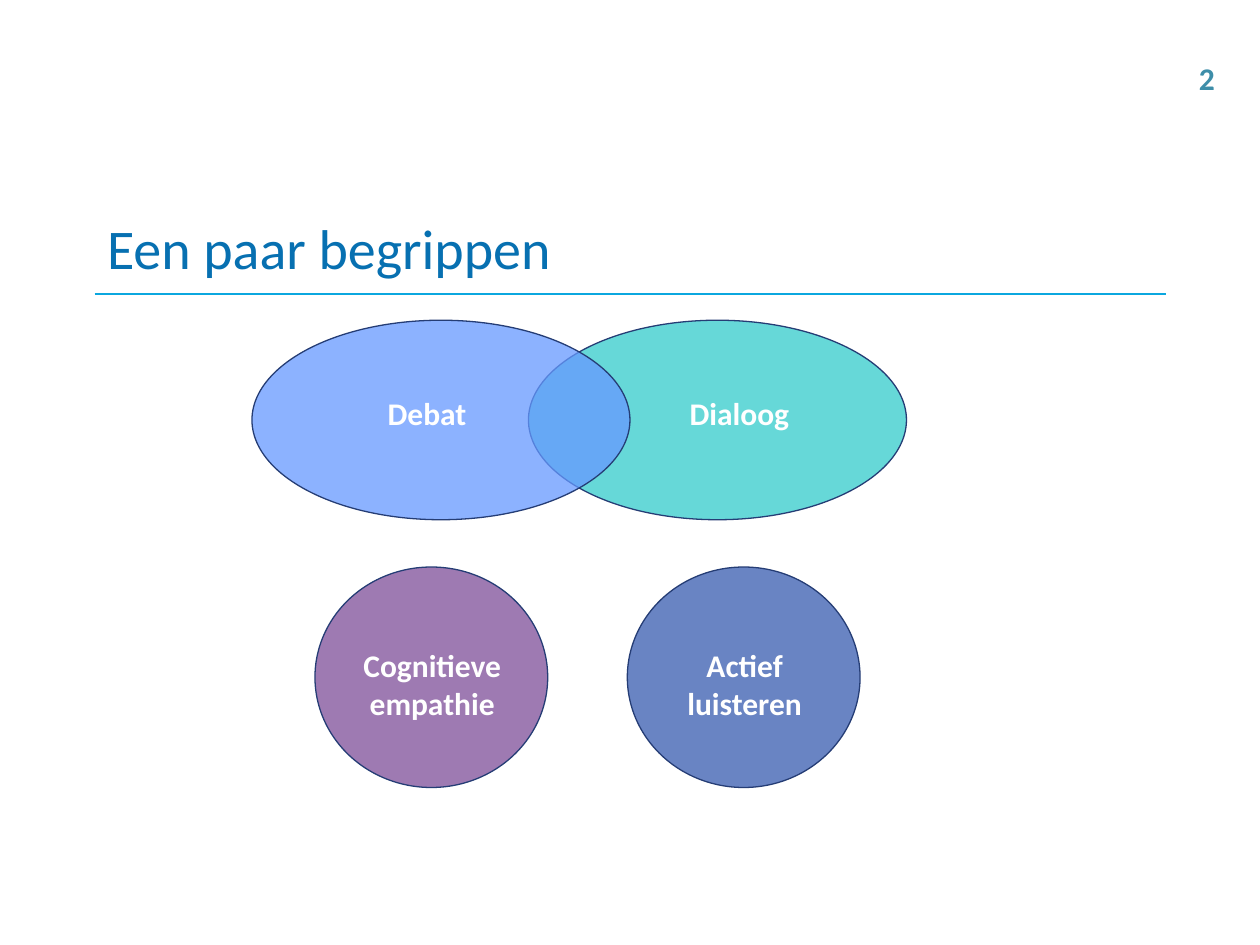
"""Build a slide with four terms about debate and dialogue."""
import pptx
import pptx.dml.color
import pptx.enum.shapes
import pptx.enum.text
import pptx.oxml.ns
import pptx.util
from lxml import etree

Pt = pptx.util.Pt
Align = pptx.enum.text.PP_ALIGN
Anchor = pptx.enum.text.MSO_ANCHOR
Fit = pptx.enum.text.MSO_AUTO_SIZE
Kind = pptx.enum.shapes
qn = pptx.oxml.ns.qn


def paint(hue):
    return pptx.dml.color.RGBColor.from_string(hue)


def apply(item, style):
    for name, value in style.items():
        setattr(item, name, value)


class Deck:
    face = "Calibri"
    edge = "253D75"
    thin = Pt(0.75)
    alpha = "75000"

    def __init__(self, wide, high):
        self.show = pptx.Presentation()
        apply(self.show, {"slide_width": Pt(wide), "slide_height": Pt(high)})
        self.slide = self.show.slides.add_slide(self.show.slide_layouts[5])

    def label(self, frame, text, size, hue, bold, align):
        para = frame.paragraphs[0]
        para.alignment = align
        run = para.add_run()
        run.text = text
        apply(run.font, {"name": self.face, "size": Pt(size), "bold": bold})
        run.font.color.rgb = paint(hue)

    def title(self, text, x, y, w, h):
        head = self.slide.shapes.title
        apply(head, {"left": Pt(x), "top": Pt(y), "width": Pt(w), "height": Pt(h)})
        apply(head.text_frame, {"vertical_anchor": Anchor.MIDDLE, "auto_size": Fit.NONE})
        self.label(head.text_frame, text, 32, "0770B1", False, Align.LEFT)

    def rule(self, x, y, end, hue):
        line = self.slide.shapes.add_connector(
            Kind.MSO_CONNECTOR.STRAIGHT, Pt(x), Pt(y), Pt(end), Pt(y))
        line.line.color.rgb = paint(hue)
        line.line.width = self.thin
        etree.SubElement(line._element.spPr, qn("a:effectLst"))

    def oval(self, x, y, w, h, hue):
        oval = self.slide.shapes.add_shape(
            Kind.MSO_SHAPE.OVAL, Pt(x), Pt(y), Pt(w), Pt(h))
        oval.shadow.inherit = False
        oval.fill.solid()
        oval.fill.fore_color.rgb = paint(hue)
        tone = oval._element.spPr.find(qn("a:solidFill"))[0]
        etree.SubElement(tone, qn("a:alpha"), val=self.alpha)
        oval.line.color.rgb = paint(self.edge)
        oval.line.width = self.thin

    def text(self, text, x, y, w, h, hue="FFFFFF", inset=3, wrap=True, align=Align.CENTER):
        box = self.slide.shapes.add_textbox(Pt(x), Pt(y), Pt(w), Pt(h))
        apply(box.text_frame, {"word_wrap": wrap, "auto_size": Fit.SHAPE_TO_FIT_TEXT})
        if inset is not None:
            sides = ("left", "top", "right", "bottom")
            apply(box.text_frame, {"margin_" + side: Pt(inset) for side in sides})
        self.label(box.text_frame, text, 18, hue, True, align)

    def save(self):
        self.show.save("out.pptx")


def main():
    deck = Deck(720, 540)
    deck.rule(54, 168, 666, "0BA7DF")
    deck.title("Een paar begrippen", 54, 114, 612, 54)
    deck.text("2", 678, 30, 24, 29, "3E8EA9", None, False, Align.LEFT)
    for x, hue in ((302, "33CCCC"), (144, "6699FF")):
        deck.oval(x, 183, 216, 114, hue)
    for text, x in (("Debat", 186.5), ("Dialoog", 365)):
        deck.text(text, x, 222, 115, 27.5)
    terms = (("Actief luisteren", 358.5, "375BB0"), ("Cognitieve empathie", 180, "7E4E99"))
    for text, x, hue in terms:
        deck.oval(x, 324, 133, 126, hue)
        deck.text(text, x + 9.5, 366, 115, 49)
    deck.save()


if __name__ == "__main__":
    main()
